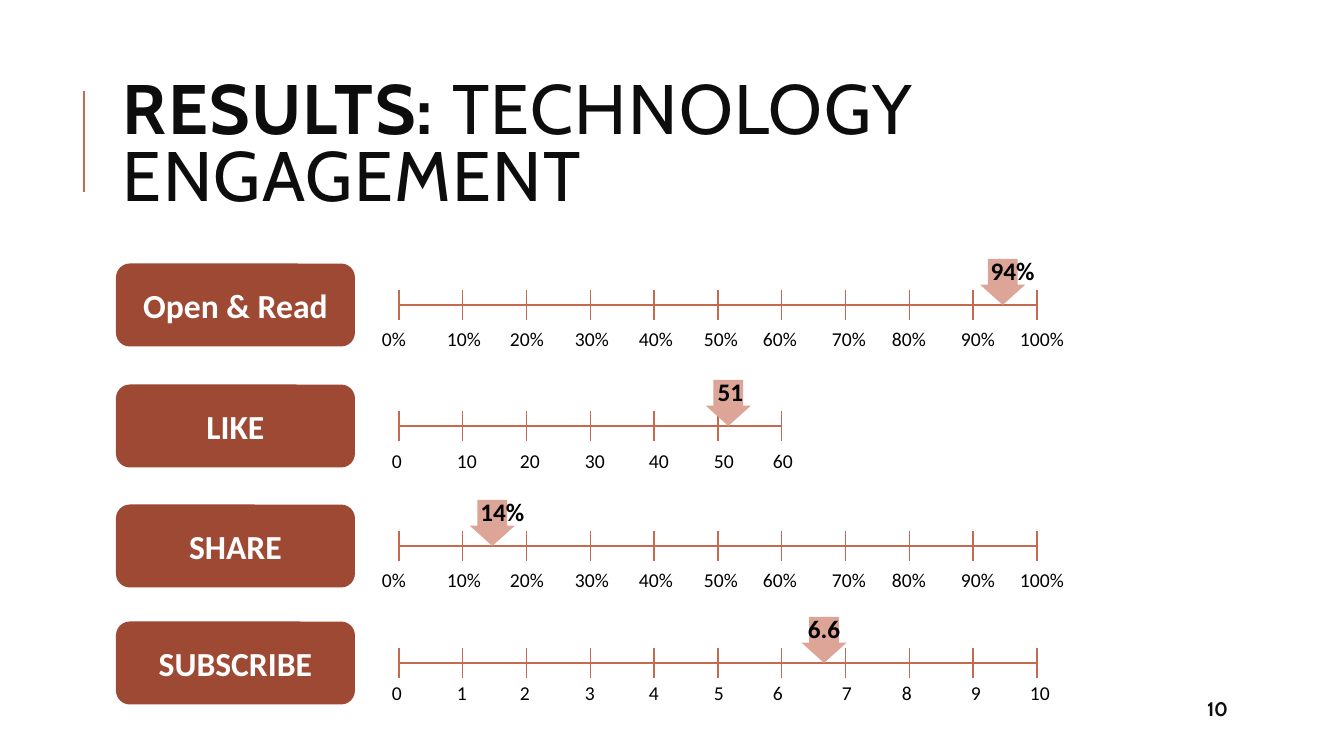
"""Builds the technology engagement results slide with four marked scales."""
from dataclasses import dataclass

from lxml import etree
from pptx import Presentation
from pptx.dml.color import RGBColor
from pptx.enum.shapes import MSO_CONNECTOR, MSO_SHAPE
from pptx.enum.text import MSO_ANCHOR, MSO_AUTO_SIZE, PP_ALIGN
from pptx.oxml.ns import qn
from pptx.util import Pt

LINE = MSO_CONNECTOR.STRAIGHT
ROUNDED, ARROW = MSO_SHAPE.ROUNDED_RECTANGLE, MSO_SHAPE.DOWN_ARROW
LEFT, CENTER = PP_ALIGN.LEFT, PP_ALIGN.CENTER
TOP, MIDDLE = MSO_ANCHOR.TOP, MSO_ANCHOR.MIDDLE
NO_FIT = MSO_AUTO_SIZE.NONE


@dataclass(frozen=True)
class Theme:
    """Colours, fonts and type sizes."""
    ink: str = "0D0D0D"
    black: str = "000000"
    white: str = "FFFFFF"
    accent: str = "C66951"
    box: str = "9E4934"
    marker: str = "DDA597"
    head: str = "Cabin"
    body: str = "Calibri"
    title: int = 50
    label: int = 24
    value: int = 18
    small: int = 14


T = Theme()
TITLE = [("RESULTS: ", True), ("TECHNOLOGY ENGAGEMENT", False)]
PAGE = "10"
PERCENTS = [f"{n}%" for n in range(0, 101, 10)]
TENS = [str(n) for n in range(0, 61, 10)]
UNITS = [str(n) for n in range(11)]
# name, axis y, tick labels, label left, label drop, steps to marker, value, value shift
ROWS = [
    ("Open & Read", 305, PERCENTS, 368, 17, 9.4, "94%", 10),
    ("LIKE", 426, TENS, 378, 18, 5.1, "51", 2),
    ("SHARE", 546, PERCENTS, 368, 17, 1.4, "14%", 10),
    ("SUBSCRIBE", 663, UNITS, 378, 13, 6.6, "6.6", 0),
]
AXIS_X, AXIS_W, STEPS = 399, 638, 10
TICK = 15
TAB_STOPS = (65, 128, 193, 257, 322, 381, 450, 510, 579, 638)
BOX_X, BOX_W, BOX_H = 116, 239, 83
ARROW_W, ARROW_H, ARROW_SHIFT = 45, 46, 4
VALUE_W, VALUE_H, VALUE_RISE = 82, 40, 55


def px(n):
    """Turn px into EMU."""
    return round(n * 914400 / 100.8)


def area(x, y, w, h):
    return px(x), px(y), px(w), px(h)


def rgb(color):
    return RGBColor.from_string(color)


def write(shape, runs, size, color=T.black, font=T.body, bold=False,
          align=LEFT, anchor=TOP, wrap=True, inset=10, stops=()):
    """Write a string or (text, bold) pairs into a shape as one paragraph."""
    tf = shape.text_frame
    tf.word_wrap, tf.auto_size, tf.vertical_anchor = wrap, NO_FIT, anchor
    tf.margin_left, tf.margin_right = px(inset), px(10)
    tf.margin_top = tf.margin_bottom = px(5)
    p = tf.paragraphs[0]
    p.alignment = align
    if stops:
        tabs = etree.SubElement(p._p.get_or_add_pPr(), qn("a:tabLst"))
        for stop in stops:
            etree.SubElement(tabs, qn("a:tab"), pos=str(px(stop)), algn="l")
    for text, strong in [(runs, bold)] if isinstance(runs, str) else runs:
        r = p.add_run()
        r.text = text
        r.font.name, r.font.size, r.font.bold = font, Pt(size), strong
        r.font.color.rgb = rgb(color)
    return p


def add_line(shapes, x1, y1, x2, y2, width):
    c = shapes.add_connector(LINE, px(x1), px(y1), px(x2), px(y2))
    c.line.color.rgb, c.line.width = rgb(T.accent), Pt(width)
    etree.SubElement(c._element.spPr, qn("a:effectLst"))


def add_block(s, kind, box, fill):
    sp = s.shapes.add_shape(kind, *area(*box))
    sp.shadow.inherit = False
    sp.fill.solid()
    sp.fill.fore_color.rgb = rgb(fill)
    sp.line.fill.background()
    return sp


def add_text(s, box, text, size, **fmt):
    write(s.shapes.add_textbox(*area(*box)), text, size, **fmt)


def add_title(s):
    title = s.shapes.title
    title.left, title.top, title.width, title.height = area(113, 65, 1071, 165)
    p = write(title, TITLE, T.title, color=T.ink, font=T.head, anchor=MIDDLE)
    p.line_spacing = 0.8
    for r in p.runs:
        r.font._element.set("spc", "100")
    add_line(s.shapes, 84, 91, 84, 192, 1.5)


def add_row(s, name, y, labels, label_x, drop, steps, value, shift):
    box = add_block(s, ROUNDED, (BOX_X, y - BOX_H / 2, BOX_W, BOX_H), T.box)
    write(box, name, T.label, color=T.white, bold=True, align=CENTER, anchor=MIDDLE)

    step = AXIS_W / STEPS
    axis = s.shapes.add_group_shape().shapes
    add_line(axis, AXIS_X, y, AXIS_X + step * (len(labels) - 1), y, 1.5)
    for i in range(len(labels)):
        x = AXIS_X + i * step
        add_line(axis, x, y - TICK, x, y + TICK, 1)
    add_text(s, (label_x, y + drop, step * len(labels) + 15, 34), "\t".join(labels),
             T.small, wrap=False, inset=14, stops=TAB_STOPS[:len(labels) - 1])

    mid = AXIS_X + steps * step + ARROW_SHIFT
    arrow = add_block(s, ARROW, (mid - ARROW_W / 2, y - ARROW_H, ARROW_W, ARROW_H), T.marker)
    arrow.adjustments[0], arrow.adjustments[1] = 0.66, 0.45
    add_text(s, (mid + shift - VALUE_W / 2, y - VALUE_RISE, VALUE_W, VALUE_H), value,
             T.value, bold=True, align=CENTER)


def main():
    prs = Presentation()
    prs.slide_width, prs.slide_height = px(1344), px(756)
    s = prs.slides.add_slide(prs.slide_layouts[5])
    add_title(s)
    for row in ROWS:
        add_row(s, *row)
    add_text(s, (1197, 693, 49, 31), PAGE, T.small, color=T.ink, font=T.head,
             bold=True, anchor=MIDDLE)
    prs.save("out.pptx")


if __name__ == "__main__":
    main()
